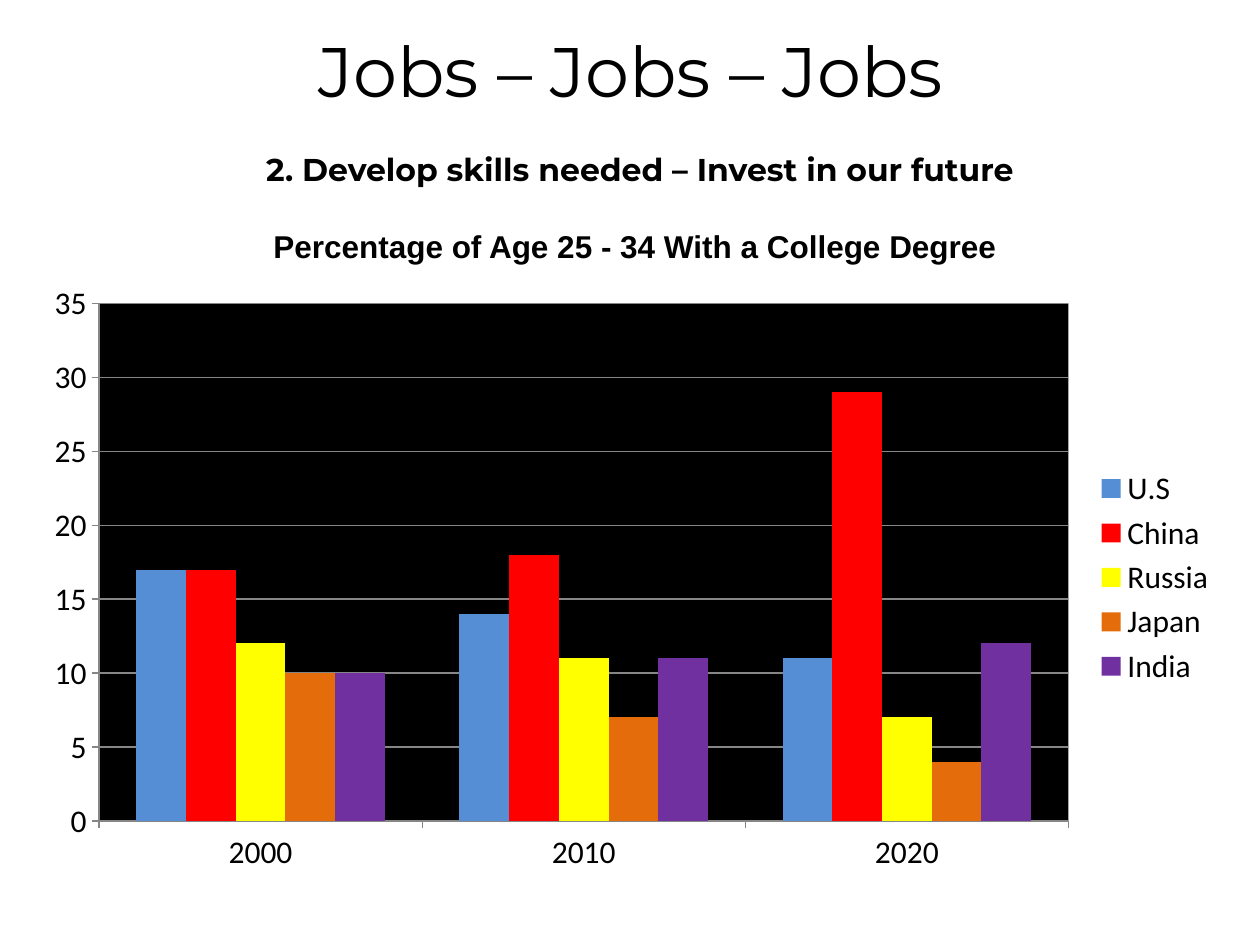
from lxml import etree
from pptx import Presentation
from pptx import util as u
from pptx.chart.data import CategoryChartData
from pptx.dml.color import RGBColor
from pptx.enum import chart as charts, text
from pptx.oxml import parse_xml
from pptx.oxml.ns import nsdecls

PX = 914400 / 126
BLACK = RGBColor(0, 0, 0)
GRAY = RGBColor(0x86, 0x86, 0x86)
SERIES = [
    ("U.S", (17, 14, 11), RGBColor(0x55, 0x8E, 0xD5)),
    ("China", (17, 18, 29), RGBColor(0xFF, 0, 0)),
    ("Russia", (12, 11, 7), RGBColor(0xFF, 0xFF, 0)),
    ("Japan", (10, 7, 4), RGBColor(0xE4, 0x6C, 0x0A)),
    ("India", (10, 11, 12), RGBColor(0x70, 0x30, 0xA0)),
]


def px(*lengths):
    return [u.Emu(round(length * PX)) for length in lengths]


def format_paragraph(paragraph, font_name, size, bold=False):
    paragraph.alignment = text.PP_ALIGN.CENTER
    for run in paragraph.runs:
        run.font.name = font_name
        run.font.size = u.Pt(size)
        run.font.bold = bold
        run.font.color.rgb = BLACK


def add_title(slide):
    title = slide.shapes.title
    title.left, title.top, title.width, title.height = px(73, 21, 1134, 174)
    frame = title.text_frame
    frame.text = "Jobs – Jobs – Jobs \n2. Develop skills needed – Invest in our future"
    frame.word_wrap = True
    frame.auto_size = text.MSO_AUTO_SIZE.NONE
    frame.vertical_anchor = text.MSO_ANCHOR.TOP
    heading, subheading = frame.paragraphs
    format_paragraph(heading, "Montserrat", 40)
    format_paragraph(subheading, "Montserrat", 18, True)
    heading.space_before = u.Pt(0)
    subheading.space_before = u.Pt(22)


def add_caption(slide):
    frame = slide.shapes.add_textbox(*px(73, 221, 1124, 50)).text_frame
    frame.word_wrap = True
    frame.text = "Percentage of Age 25 - 34 With a College Degree"
    format_paragraph(frame.paragraphs[0], "Arial", 18, True)


def format_plot_area(chart):
    plot_area = chart.plots[0]._element.getparent()
    for layout in plot_area.findall("{*}layout"):
        plot_area.remove(layout)
    layout = parse_xml(
        f'<c:layout {nsdecls("c")}><c:manualLayout><c:layoutTarget val="inner"/>'
        '<c:xMode val="edge"/><c:yMode val="edge"/></c:manualLayout></c:layout>')
    for name, value in (("x", 0.056), ("y", 0.05), ("w", 0.81), ("h", 0.85)):
        tag = layout[0][0].tag.replace("layoutTarget", name)
        etree.SubElement(layout[0], tag, val=str(value))
    plot_area.insert(0, layout)
    plot_area.append(parse_xml(
        f'<c:spPr {nsdecls("c", "a")}><a:solidFill><a:srgbClr val="{BLACK}"/>'
        '</a:solidFill></c:spPr>'))


def add_degree_chart(slide):
    data = CategoryChartData()
    data.categories = ["2000", "2010", "2020"]
    for name, values, color in SERIES:
        data.add_series(name, values)
    chart = slide.shapes.add_chart(
        charts.XL_CHART_TYPE.COLUMN_CLUSTERED, *px(32, 273, 1197, 609), data).chart
    chart.has_title = False
    chart.font.name = "Calibri"
    chart.font.size = u.Pt(18)
    chart.font.color.rgb = BLACK
    chart.has_legend = True
    chart.legend.position = charts.XL_LEGEND_POSITION.RIGHT
    chart.legend.include_in_layout = False
    plot = chart.plots[0]
    plot.gap_width = 150
    plot.overlap = 0
    plot.vary_by_categories = False
    for series, (name, values, color) in zip(plot.series, SERIES):
        series.format.fill.solid()
        series.format.fill.fore_color.rgb = color
    for axis in (chart.category_axis, chart.value_axis):
        axis.major_tick_mark = charts.XL_TICK_MARK.OUTSIDE
        axis.format.line.color.rgb = GRAY
    value_axis = chart.value_axis
    value_axis.minimum_scale, value_axis.maximum_scale = 0, 35
    value_axis.major_unit = 5
    value_axis.has_major_gridlines = True
    value_axis.major_gridlines.format.line.color.rgb = GRAY
    format_plot_area(chart)


def main():
    presentation = Presentation()
    presentation.slide_width, presentation.slide_height = px(1260, 945)
    slide = presentation.slides.add_slide(presentation.slide_layouts[5])
    add_degree_chart(slide)
    add_caption(slide)
    add_title(slide)
    presentation.save("out.pptx")


if __name__ == "__main__":
    main()
